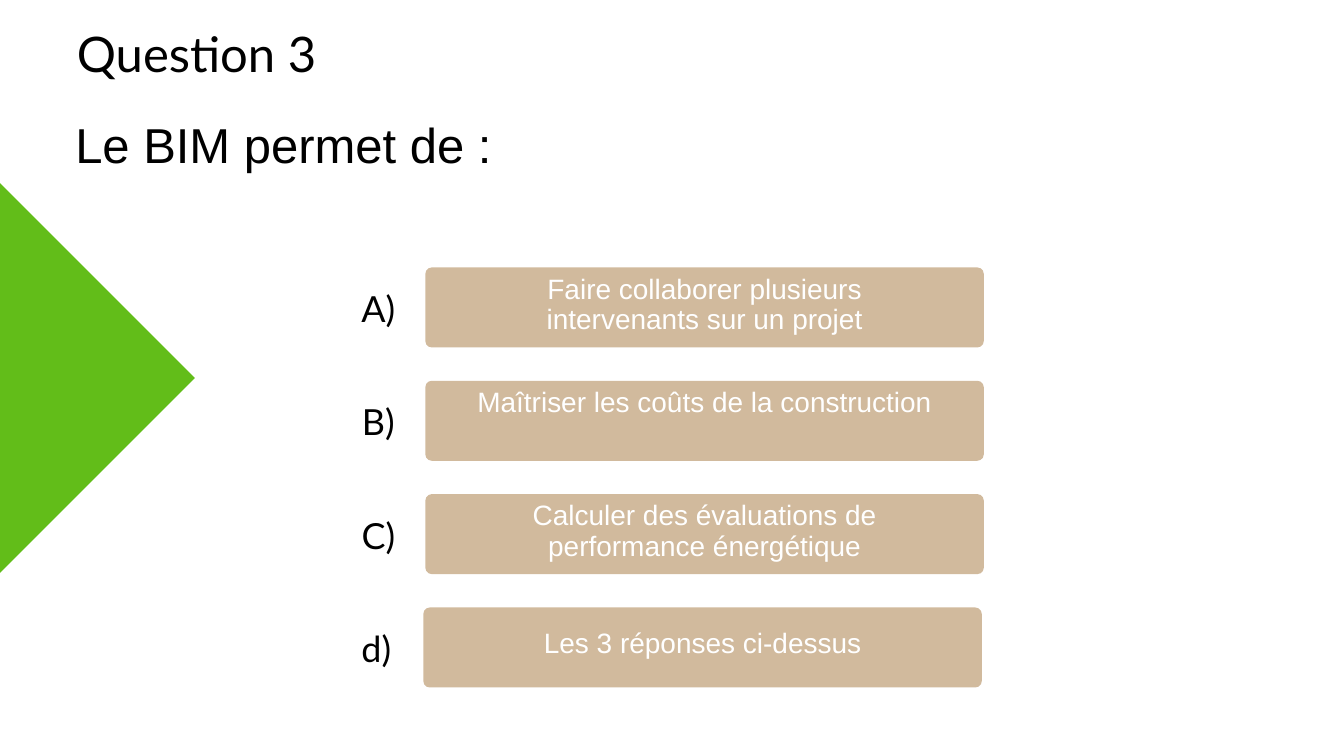
from pptx import Presentation
from pptx.dml.color import RGBColor
from pptx.enum.shapes import MSO_SHAPE
from pptx.enum.text import PP_ALIGN
from pptx.util import Inches, Pt

ROUNDED, DIAMOND = MSO_SHAPE.ROUNDED_RECTANGLE, MSO_SHAPE.DIAMOND
LEFT, CENTER = PP_ALIGN.LEFT, PP_ALIGN.CENTER
BLACK, WHITE, GREEN, SAND = "000000", "FFFFFF", "62BD19", "D1BA9D"

TITLE = "Question 3"
QUESTION = "Le BIM permet de :"
# label, answer, left of the bar, top of the text inside the bar, text height
ANSWERS = [
    ("A)", "Faire collaborer plusieurs intervenants sur un projet", 6.33, 0.1, 0.97),
    ("B)", "Maîtriser les coûts de la construction", 6.33, 0.1, 0.97),
    ("C)", "Calculer des évaluations de performance énergétique", 6.33, 0.1, 0.97),
    ("d)", "Les 3 réponses ci-dessus", 6.3, 0.32, 0.52),
]
BAR_W, BAR_H = 8.31, 1.19
FIRST_TOP, LAST_TOP = 3.98, 9.04
PITCH = (LAST_TOP - FIRST_TOP) / (len(ANSWERS) - 1)
LABEL_W, LABEL_H, LABEL_OFFSET = 0.56, 0.8, 0.98
TEXT_W = 6.96

prs = Presentation()
prs.slide_width, prs.slide_height = Inches(20), Inches(11.25)
s = prs.slides.add_slide(prs.slide_layouts[6])


def rgb(color):
    return RGBColor.from_string(color)


def add_block(kind, x, y, w, h, color):
    """Add a filled preset shape without outline or shadow."""
    sp = s.shapes.add_shape(kind, Inches(x), Inches(y), Inches(w), Inches(h))
    sp.fill.solid()
    sp.fill.fore_color.rgb = rgb(color)
    sp.line.fill.background()
    sp.shadow.inherit = False
    return sp


def add_text(text, x, y, w, h, size, font, color, spacing, align=CENTER):
    """Add a text box with no margins and exact line spacing in points."""
    tf = s.shapes.add_textbox(Inches(x), Inches(y), Inches(w), Inches(h)).text_frame
    tf.word_wrap = True
    tf.margin_left = tf.margin_top = tf.margin_right = tf.margin_bottom = 0
    p = tf.paragraphs[0]
    p.text = text
    p.alignment = align
    p.line_spacing = Pt(spacing)
    p.font.size, p.font.name = Pt(size), font
    p.font.color.rgb = rgb(color)


add_block(DIAMOND, -2.93, 2.71, 5.83, 5.83, GREEN)
add_text(TITLE, 1.12, 0.2, 3.61, 1.09, 52.5, "Lato", BLACK, 73.5)
add_text(QUESTION, 1.12, 1.79, 7.39, 0.92, 52.5, "Arial", BLACK, 57.2, LEFT)

for i, (label, answer, left, text_top, text_h) in enumerate(ANSWERS):
    top = FIRST_TOP + i * PITCH
    bar = add_block(ROUNDED, left, top, BAR_W, BAR_H, SAND)
    bar.adjustments[0] = 0.08
    add_text(answer, left + (BAR_W - TEXT_W) / 2, top + text_top, TEXT_W, text_h,
             30, "Arial", WHITE, 32.7)
    add_text(label, left - LABEL_OFFSET, top + 0.18, LABEL_W, LABEL_H,
             38.5, "Lato", BLACK, 53.9)

prs.save("out.pptx")
